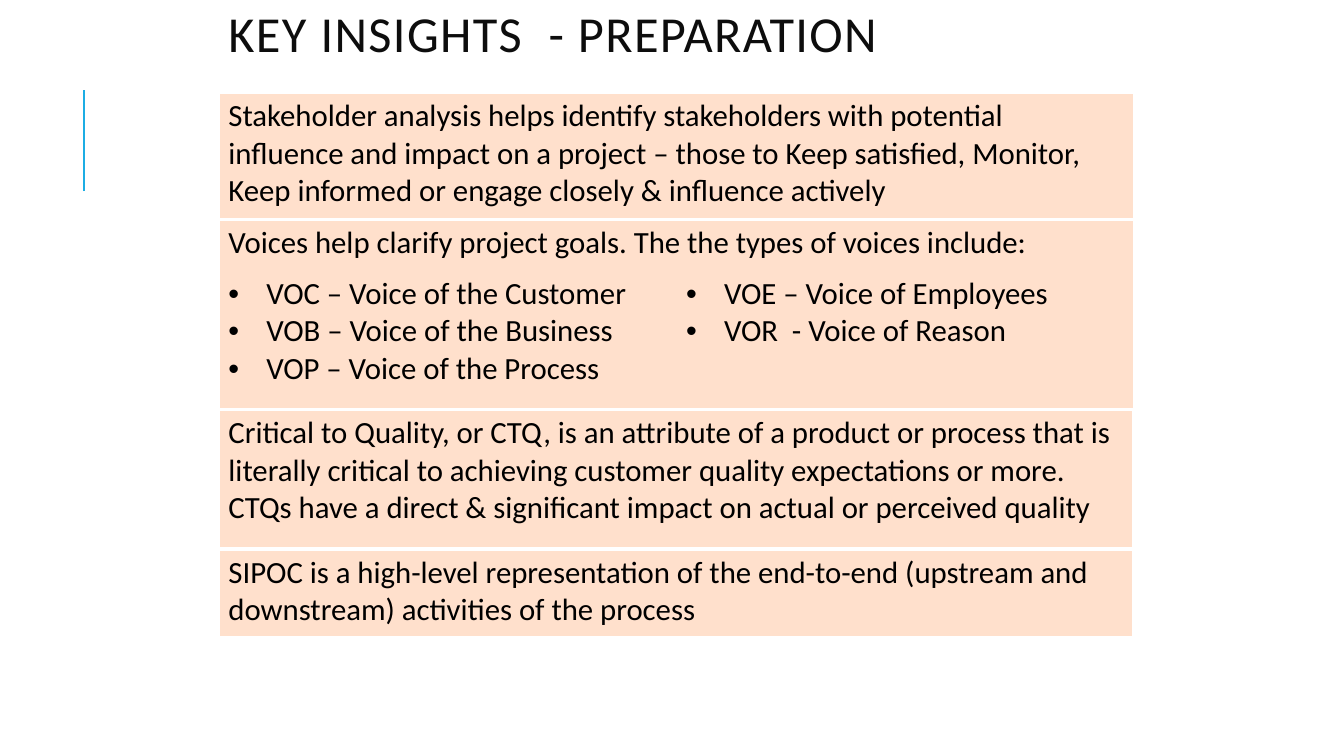
from lxml.etree import SubElement
from pptx import Presentation
from pptx.dml.color import RGBColor
from pptx.enum.shapes import MSO_CONNECTOR
from pptx.enum.text import MSO_ANCHOR, MSO_AUTO_SIZE, PP_ALIGN
from pptx.oxml.ns import qn
from pptx.util import Pt

PX = 9525  # EMU per pixel at 96 pixels to the inch
FONT = "Calibri"
COLORS = {"accent": "1CADE4", "title": "0D0D0D", "text": "000000",
          "cell": "FFE0CC", "border": "FFFFFF", "shadow": "000000"}
ROW_HEIGHTS = [121, 48, 133, 133, 85]
BULLET_INDENT = 36
VOICES_INTRO_ROW, VOICES_ROW = 1, 2

INSIGHTS = [
    ["Stakeholder analysis helps identify stakeholders with potential influence and impact "
     "on a project – those to Keep satisfied, Monitor, Keep informed or engage closely "
     "& influence actively"],
    ["Voices help clarify project goals. The the types of voices include:"],
    [["VOC – Voice of the Customer", "VOB – Voice of the Business",
      "VOP – Voice of the Process"],
     ["VOE – Voice of Employees", "VOR  - Voice of Reason"]],
    ["Critical to Quality, or CTQ, is an attribute of a product or process that is literally "
     "critical to achieving customer quality expectations or more. CTQs have a direct "
     "& significant impact on actual or perceived quality"],
    ["SIPOC is a high-level representation of the end-to-end (upstream and downstream) "
     "activities of the process"],
]


def rgb(name):
    return RGBColor.from_string(COLORS[name])


def add_run(para, text, size, color):
    span = para.add_run()
    span.text = text
    span.font.name = FONT
    span.font.size = Pt(size)
    span.font.bold = False
    span.font.color.rgb = rgb(color)
    return span


def add_text_shadow(span):
    properties = span.font._element
    properties.set("spc", "100")
    effects = SubElement(properties, qn("a:effectLst"))
    properties.find(qn("a:solidFill")).addnext(effects)
    shadow = SubElement(effects, qn("a:outerShdw"), blurRad="38100", dist="38100",
                        dir="2700000", algn="tl")
    color = SubElement(shadow, qn("a:srgbClr"), val=COLORS["shadow"])
    SubElement(color, qn("a:alpha"), val="43000")


def place_title(page, left, top, width, height):
    title = page.shapes.title
    title.left, title.top = left * PX, top * PX
    title.width, title.height = width * PX, height * PX
    frame = title.text_frame
    frame.auto_size = MSO_AUTO_SIZE.NONE
    frame.word_wrap = True
    frame.vertical_anchor = MSO_ANCHOR.MIDDLE
    para = frame.paragraphs[0]
    para.alignment = PP_ALIGN.LEFT
    para.line_spacing = 0.8
    add_text_shadow(add_run(para, "KEY INSIGHTS  - PREPARATION", 36, "title"))


def add_accent_line(page, left, top, height):
    line = page.shapes.add_connector(MSO_CONNECTOR.STRAIGHT, left * PX, (top + height) * PX,
                                     left * PX, top * PX)
    line.line.color.rgb = rgb("accent")
    line.line.width = Pt(1.5)
    SubElement(line._element.spPr, qn("a:effectLst"))


def set_borders(cell, visible, points):
    """Draw the sides named in visible (of L, R, T, B) and clear the others."""
    properties = cell._tc.get_or_add_tcPr()
    for side in "LRTB":
        border = SubElement(properties, qn(f"a:ln{side}"), w=str(Pt(points)))
        if side in visible:
            fill = SubElement(border, qn("a:solidFill"))
            SubElement(fill, qn("a:srgbClr"), val=COLORS["border"])
        else:
            SubElement(border, qn("a:noFill"))


def add_bullet(para):
    properties = para._p.get_or_add_pPr()
    properties.set("marL", str(BULLET_INDENT * PX))
    properties.set("indent", str(-BULLET_INDENT * PX))
    SubElement(properties, qn("a:buFont"), typeface="Arial")
    SubElement(properties, qn("a:buChar"), char="•")


def fill_cell(cell, lines, bulleted):
    frame = cell.text_frame
    for index, text in enumerate(lines):
        para = frame.add_paragraph() if index else frame.paragraphs[0]
        if bulleted:
            add_bullet(para)
        add_run(para, text, 22, "text")


def add_insights_table(page, left, top, width):
    frame = page.shapes.add_table(len(INSIGHTS), 2, left * PX, top * PX,
                                  width * PX, sum(ROW_HEIGHTS) * PX)
    table = frame.table
    table.first_row = table.horz_banding = False
    for column in table.columns:
        column.width = width // 2 * PX
    for index, (content, height) in enumerate(zip(INSIGHTS, ROW_HEIGHTS)):
        table.rows[index].height = height * PX
        bulleted = index == VOICES_ROW
        vertical = {VOICES_INTRO_ROW: "T", VOICES_ROW: "B"}.get(index, "TB")
        for cell, outer in zip(table.rows[index].cells, "LR"):
            sides = outer if bulleted else "LR"
            set_borders(cell, sides + vertical, 3 if index > VOICES_ROW else 2.25)
            cell.fill.solid()
            cell.fill.fore_color.rgb = rgb("cell")
        if not bulleted:
            table.cell(index, 0).merge(table.cell(index, 1))
        for column, lines in enumerate(content if bulleted else [content]):
            fill_cell(table.cell(index, column), lines, bulleted)


def main():
    deck = Presentation()
    deck.slide_width, deck.slide_height = 1280 * PX, 720 * PX
    page = deck.slides.add_slide(deck.slide_layouts[5])
    add_accent_line(page, 80, 86, 96)
    place_title(page, 208, 0, 888, 72)
    add_insights_table(page, 208, 88, 872)
    deck.save("out.pptx")


if __name__ == "__main__":
    main()
